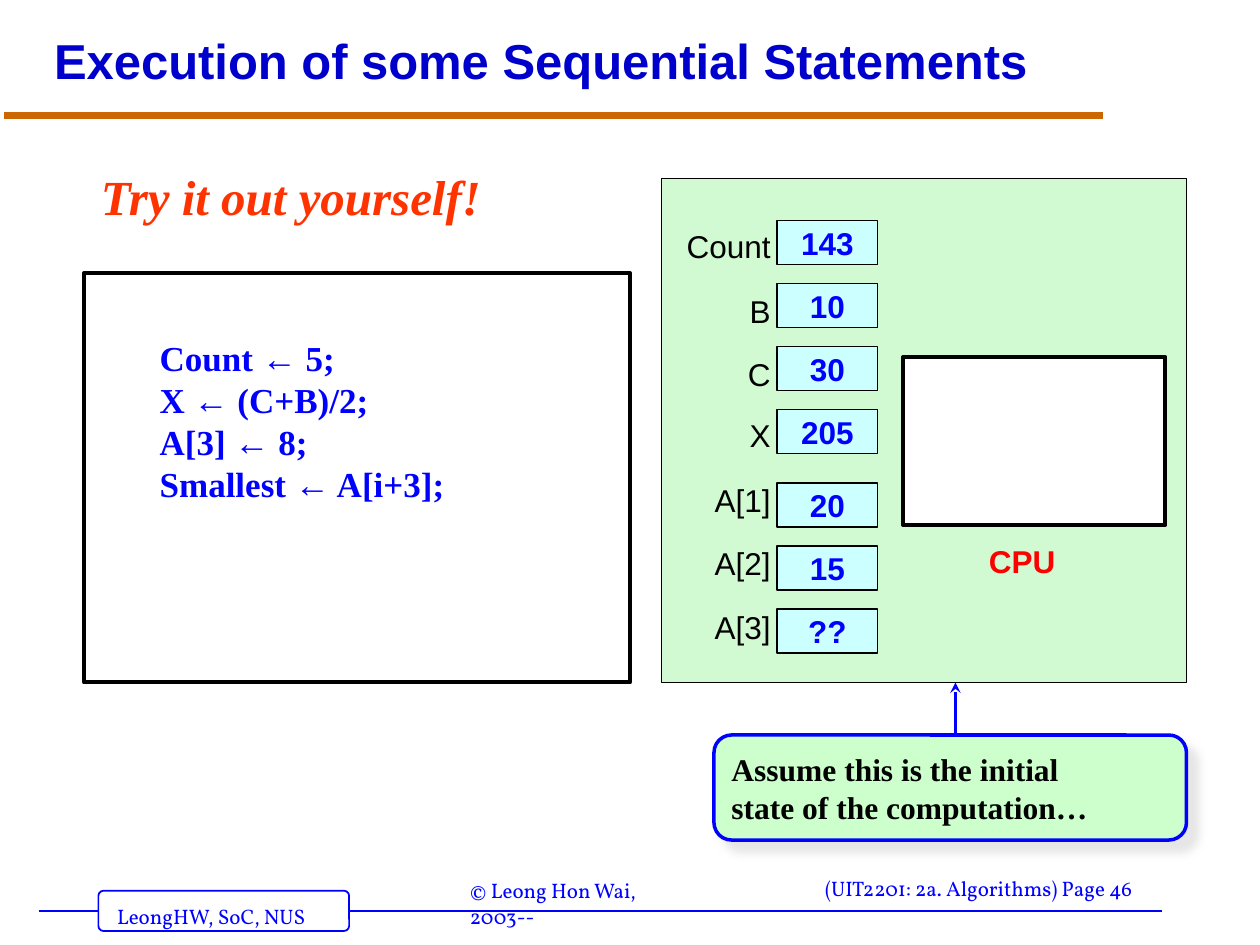
import pptx
import pptx.util
import pptx.dml.color
import pptx.enum.shapes
import pptx.enum.text
import pptx.oxml
from lxml import etree

Pt = pptx.util.Pt
SHAPE = pptx.enum.shapes.MSO_SHAPE
ALIGN = pptx.enum.text.PP_ALIGN
ANCHOR = pptx.enum.text.MSO_ANCHOR
NS = "http://schemas.openxmlformats.org/drawingml/2006/main"

BLUE, BLACK = "0000FF", "000000"
SERIF, SANS, FOOT = "Times New Roman", "Arial", "Vollkorn"

TITLE = "Execution of some Sequential Statements"
PROMPT = "Try it out yourself!"
CODE = ["Count ← 5;", "X ← (C+B)/2;", "A[3] ← 8;", "Smallest ← A[i+3];"]
NOTE = ["Assume this is the initial", "state of the computation…"]
FOOTERS = [
    ("LeongHW, SoC, NUS", 59.8, 512.6, 128),
    ("(UIT2201: 2a. Algorithms) Page 46", 464.4, 496.8, 199),
    ("© Leong Hon Wai, 2003--", 261.4, 498.2, 148),
]
MEMORY = [
    (126, [("Count", "143", 0), ("B", "10", 1.4), ("C", "30", 1.4), ("X", "205", 0)]),
    (276, [("A[1]", "20", -4.6), ("A[2]", "15", -4.6), ("A[3]", "??", -4)]),
]
CELL_X, CELL_W, CELL_H, ROW_STEP, LABEL_W = 444, 57.6, 25.2, 36, 64


def rgb(hex_string):
    return pptx.dml.color.RGBColor.from_string(hex_string)


def write(sp, lines, font, size, color, bold=False, italic=False,
          align=ALIGN.LEFT, anchor=ANCHOR.TOP, ins=(7.2, 3.6, 7.2, 3.6), spacing=None):
    tf = sp.text_frame
    tf.word_wrap = True
    tf.vertical_anchor = anchor
    tf.margin_left, tf.margin_top, tf.margin_right, tf.margin_bottom = map(Pt, ins)
    tf.text = "\n".join(lines)
    for p in tf.paragraphs:
        p.alignment = align
        if spacing:
            p.line_spacing = spacing
        for r in p.runs:
            r.font.name, r.font.size = font, Pt(size)
            r.font.bold, r.font.italic = bold, italic
            r.font.color.rgb = rgb(color)


def add_text(s, box, lines, *style, **options):
    sp = s.shapes.add_textbox(*map(Pt, box))
    write(sp, lines, *style, **options)


def add_box(s, box, fill, line, width, corner=None):
    kind = SHAPE.RECTANGLE if corner is None else SHAPE.ROUNDED_RECTANGLE
    sp = s.shapes.add_shape(kind, *map(Pt, box))
    if corner is not None:
        sp.adjustments[0] = corner
    sp.shadow.inherit = False
    if fill:
        sp.fill.solid()
        sp.fill.fore_color.rgb = rgb(fill)
    else:
        sp.fill.background()
    sp.line.color.rgb = rgb(line)
    sp.line.width = Pt(width)
    return sp


def add_line(s, ends, color, width, arrow=False):
    ln = s.shapes.add_connector(pptx.enum.shapes.MSO_CONNECTOR.STRAIGHT, *map(Pt, ends))
    ln.line.color.rgb = rgb(color)
    ln.line.width = Pt(width)
    if arrow:
        etree.SubElement(ln.line._get_or_add_ln(), f"{{{NS}}}tailEnd", type="stealth")
    etree.SubElement(ln._element.spPr, f"{{{NS}}}effectLst")


def add_shadow(sp):
    effects = sp._element.spPr.find(f"{{{NS}}}effectLst")
    effects.append(pptx.oxml.parse_xml(
        f'<a:outerShdw xmlns:a="{NS}" blurRad="{Pt(5)}" dist="{Pt(8.5)}" dir="2700000" '
        'algn="tl" rotWithShape="0"><a:srgbClr val="CECECE"><a:alpha val="50000"/>'
        '</a:srgbClr></a:outerShdw>'))


def add_frame(s):
    add_line(s, (22.3, 520.6, 663.8, 520.6), BLUE, 1)
    add_box(s, (56.2, 509, 143.3, 23), "FFFFFF", BLUE, 1, 0.125)
    add_line(s, (2.2, 66.2, 630, 66.2), "CC6600", 4)
    for text, x, y, w in FOOTERS:
        add_text(s, (x, y, w, 21.6), [text], FOOT, 12, BLUE)
    add_text(s, (23.8, 12.2, 645, 48.2), [TITLE], SANS, 28, "0000CC", True,
             anchor=ANCHOR.MIDDLE, spacing=0.9)


def add_memory(s):
    add_box(s, (378, 102, 300, 288), "D2FAD2", BLACK, 0.75)
    for top, rows in MEMORY:
        for i, (name, value, shift) in enumerate(rows):
            y = top + i * ROW_STEP
            add_text(s, (CELL_X - LABEL_W, y + shift, LABEL_W, 28.8), [name], SANS, 18, BLACK,
                     align=ALIGN.RIGHT, ins=(3.6,) * 4)
            cell = add_box(s, (CELL_X, y, CELL_W, CELL_H), "CCFFFF", BLACK, 0.75)
            write(cell, [value], SANS, 18, BLUE, True,
                  align=ALIGN.CENTER, anchor=ANCHOR.MIDDLE)
    add_box(s, (516, 204, 150, 96), "FFFFFF", BLACK, 2.25)
    add_text(s, (558, 306, 64, 28.8), ["CPU"], SANS, 18, "FF0000", True)


def main():
    prs = pptx.Presentation()
    prs.slide_width, prs.slide_height = Pt(720), Pt(540)
    s = prs.slides.add_slide(prs.slide_layouts[6])
    add_frame(s)
    code = add_box(s, (48, 156, 312, 234), None, BLACK, 2.25)
    write(code, CODE, SERIF, 20, BLUE, True, ins=(43.2, 36, 7.2, 3.6))
    note = add_box(s, (408, 420, 270, 60), "CCFFCC", BLUE, 2, 0.167)
    add_shadow(note)
    write(note, NOTE, SERIF, 18, BLACK, True, anchor=ANCHOR.MIDDLE)
    add_line(s, (546, 420, 546, 390), BLUE, 2, arrow=True)
    add_memory(s)
    add_text(s, (54, 91.4, 240, 41), [PROMPT], SERIF, 28, "FF3300", True, True, ins=(3.6,) * 4)
    prs.save("out.pptx")


if __name__ == "__main__":
    main()
